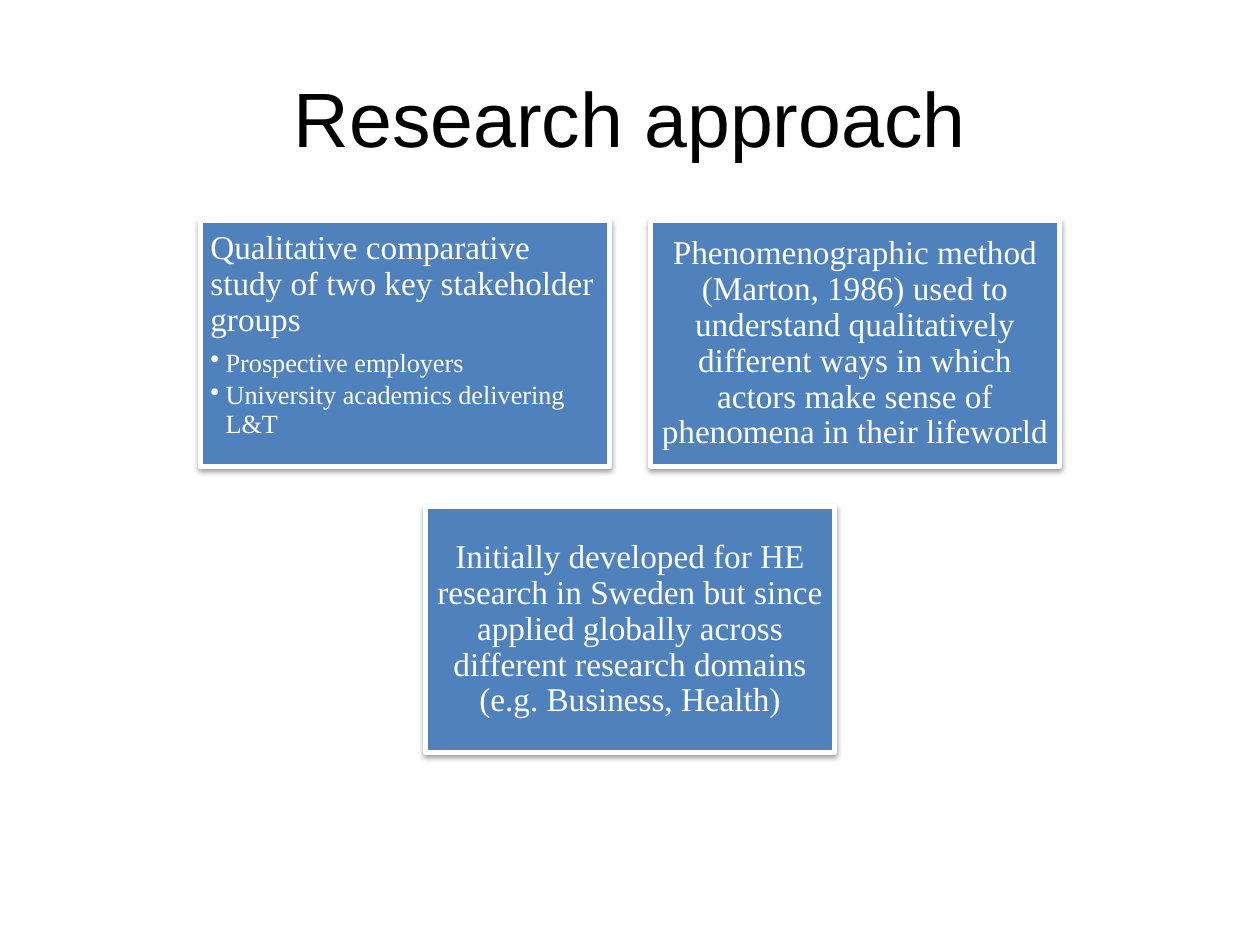
import pptx
import pptx.dml.color
import pptx.enum.shapes
import pptx.enum.text
import pptx.oxml
import pptx.oxml.ns
import pptx.util
from pptx.util import Inches

COLORS = {"title": "000000", "card": "4F81BD", "light": "FFFFFF", "shadow": "000000"}
ALIGN = pptx.enum.text.PP_ALIGN
ANCHOR = pptx.enum.text.MSO_ANCHOR


def rgb(name):
    """Return the named colour."""
    return pptx.dml.color.RGBColor.from_string(COLORS[name])


def write(paragraph, text, *, font="Times New Roman", size=19, color="light",
          align=ALIGN.CENTER, line_spacing=0.9, space_after=0, bullet=False):
    """Fill a paragraph with formatted text."""
    paragraph.alignment = align
    paragraph.line_spacing = line_spacing
    paragraph.space_after = pptx.util.Pt(space_after)
    if bullet:
        paragraph.level = 1
        properties = paragraph._p.get_or_add_pPr()
        properties.set("marL", str(Inches(0.12)))
        properties.set("indent", str(Inches(-0.12)))
        properties.append(pptx.oxml.parse_xml(
            f'<a:buChar {pptx.oxml.ns.nsdecls("a")} char="•"/>'))
    run = paragraph.add_run()
    run.text = text
    run.font.name = font
    run.font.size = pptx.util.Pt(size)
    run.font.color.rgb = rgb(color)


class SlideBuilder:
    """Hold the card style and the current slide."""

    card_width, card_height = 3.25, 1.95
    inset = 0.08

    def __init__(self, slide):
        self.slide = slide

    def title(self, text):
        """Add the centred slide title."""
        shape = self.slide.shapes.add_textbox(Inches(0.5), Inches(0.3), Inches(9), Inches(1.25))
        frame = shape.text_frame
        frame.word_wrap = True
        frame.vertical_anchor = ANCHOR.MIDDLE
        write(frame.paragraphs[0], text, font="Arial", size=44, color="title", line_spacing=1)

    def card(self, left, top, text, bullets=()):
        """Add a shadowed card with a statement and optional bullets."""
        shape = self.slide.shapes.add_shape(
            pptx.enum.shapes.MSO_SHAPE.RECTANGLE, Inches(left), Inches(top),
            Inches(self.card_width), Inches(self.card_height))
        shape.fill.solid()
        shape.fill.fore_color.rgb = rgb("card")
        shape.line.color.rgb = rgb("light")
        shape.line.width = pptx.util.Pt(3)
        self.shadow(shape)
        frame = shape.text_frame
        frame.word_wrap = True
        frame.margin_left = frame.margin_right = Inches(self.inset)
        frame.margin_top = frame.margin_bottom = Inches(self.inset)
        frame.vertical_anchor = ANCHOR.TOP if bullets else ANCHOR.MIDDLE
        align = ALIGN.LEFT if bullets else ALIGN.CENTER
        write(frame.paragraphs[0], text, align=align, space_after=6.65 if bullets else 0)
        for bullet in bullets:
            write(frame.add_paragraph(), bullet, size=15, align=align,
                  space_after=2.25, bullet=True)

    def shadow(self, shape):
        """Give a shape a soft shadow below it."""
        shape.shadow.inherit = False
        effects = shape._element.spPr.find(pptx.oxml.ns.qn("a:effectLst"))
        effects.append(pptx.oxml.parse_xml(
            f'<a:outerShdw {pptx.oxml.ns.nsdecls("a")} blurRad="{pptx.util.Pt(3.1)}" '
            f'dist="{pptx.util.Pt(1.6)}" dir="5400000" rotWithShape="0">'
            f'<a:srgbClr val="{COLORS["shadow"]}"><a:alpha val="38000"/></a:srgbClr>'
            '</a:outerShdw>'))


def main():
    """Build and save the slide."""
    presentation = pptx.Presentation()
    presentation.slide_width, presentation.slide_height = Inches(10), Inches(7.5)
    builder = SlideBuilder(presentation.slides.add_slide(presentation.slide_layouts[6]))
    builder.title("Research approach")

    left, top, gap = 1.59, 1.75, 0.32
    column_step = builder.card_width + gap
    row_step = builder.card_height + gap
    builder.card(left, top, "Qualitative comparative study of two key stakeholder groups",
                 ["Prospective employers", "University academics delivering L&T"])
    builder.card(left + column_step, top,
                 "Phenomenographic method (Marton, 1986) used to understand qualitatively "
                 "different ways in which actors make sense of phenomena in their lifeworld")
    builder.card(left + column_step / 2, top + row_step,
                 "Initially developed for HE research in Sweden but since applied globally "
                 "across different research domains (e.g. Business, Health)")
    presentation.save("out.pptx")


if __name__ == "__main__":
    main()
